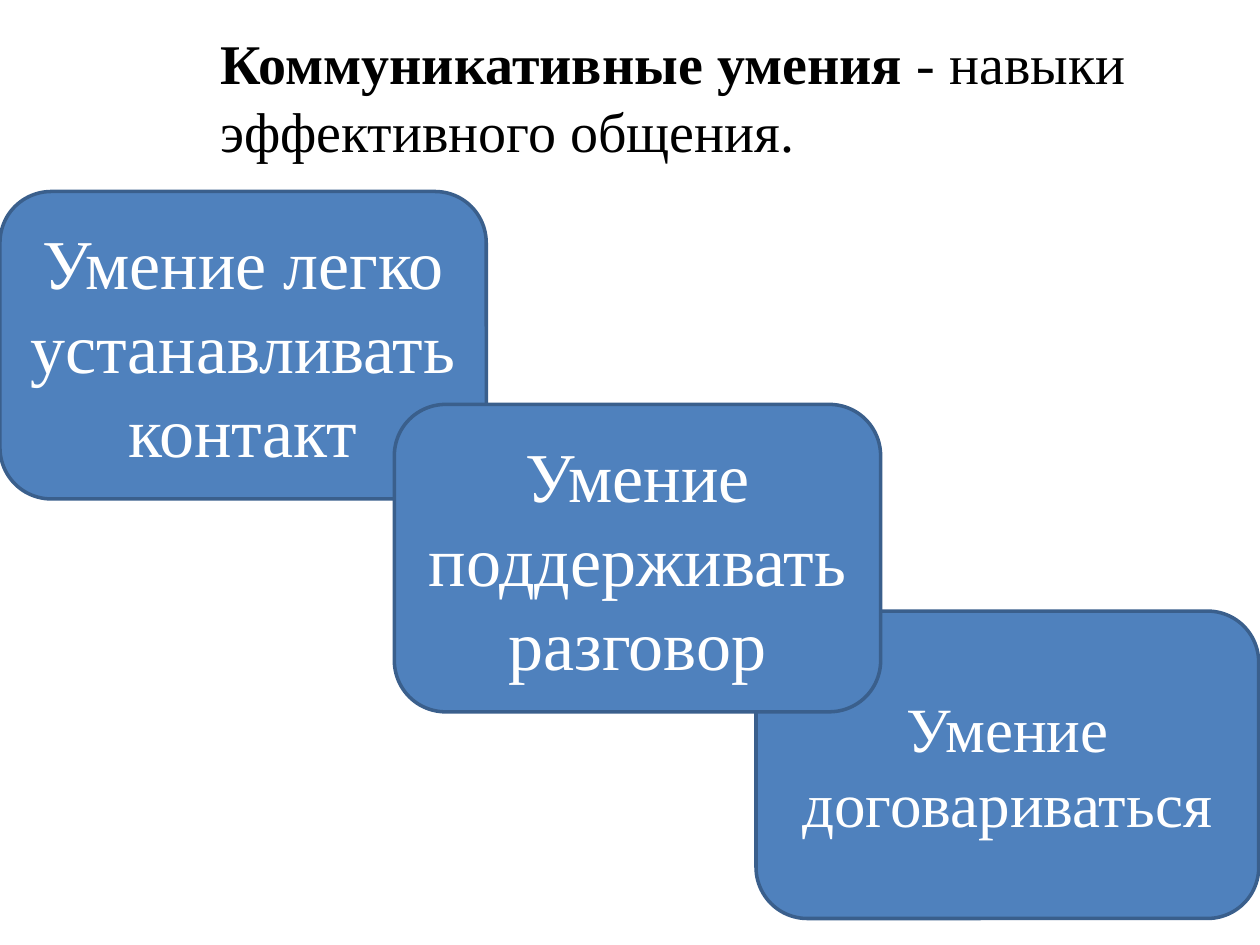
from pptx import Presentation
from pptx.dml.color import RGBColor
from pptx.enum.shapes import MSO_SHAPE as Shape
from pptx.enum.text import MSO_ANCHOR as Anchor, MSO_AUTO_SIZE as Fit, PP_ALIGN as Align
from pptx.util import Inches, Pt

BLACK = RGBColor(0x00, 0x00, 0x00)
WHITE = RGBColor(0xFF, 0xFF, 0xFF)
BLUE = RGBColor(0x4F, 0x81, 0xBD)
NAVY = RGBColor(0x3A, 0x5F, 0x8C)


def add_run(par, text, size, color, bold=False):
    run = par.add_run()
    run.text = text
    run.font.name = "Times New Roman"
    run.font.size = Pt(size)
    run.font.bold = bold
    run.font.color.rgb = color


prs = Presentation()
prs.slide_width, prs.slide_height = Inches(10), Inches(7.5)
slide = prs.slides.add_slide(prs.slide_layouts[5])

title = slide.shapes.title
title.left, title.top = Inches(1.65), Inches(0.18)
title.width, title.height = Inches(8.03), Inches(1.18)
frame = title.text_frame
frame.word_wrap = True
frame.auto_size = Fit.NONE
frame.vertical_anchor = Anchor.TOP
par = frame.paragraphs[0]
par.alignment = Align.LEFT
add_run(par, "Коммуникативные умения ", size=32, color=BLACK, bold=True)
add_run(par, "- навыки эффективного общения.", size=32, color=BLACK)

# Back to front: the middle card overlaps both others
cards = [
    ("Умение легко устанавливать контакт", 0, 1.52, 3.86, 40),
    ("Умение договариваться", 6, 4.85, 3.99, 36),
    ("Умение поддерживать разговор", 3.13, 3.21, 3.86, 40),
]
for text, left, top, width, size in cards:
    card = slide.shapes.add_shape(
        Shape.ROUNDED_RECTANGLE, Inches(left), Inches(top), Inches(width), Inches(2.44))
    card.shadow.inherit = False
    card.fill.solid()
    card.fill.fore_color.rgb = BLUE
    card.line.color.rgb = NAVY
    card.line.width = Pt(2)
    frame = card.text_frame
    frame.word_wrap = True
    frame.vertical_anchor = Anchor.MIDDLE
    par = frame.paragraphs[0]
    par.alignment = Align.CENTER
    add_run(par, text, size=size, color=WHITE)

prs.save("out.pptx")
